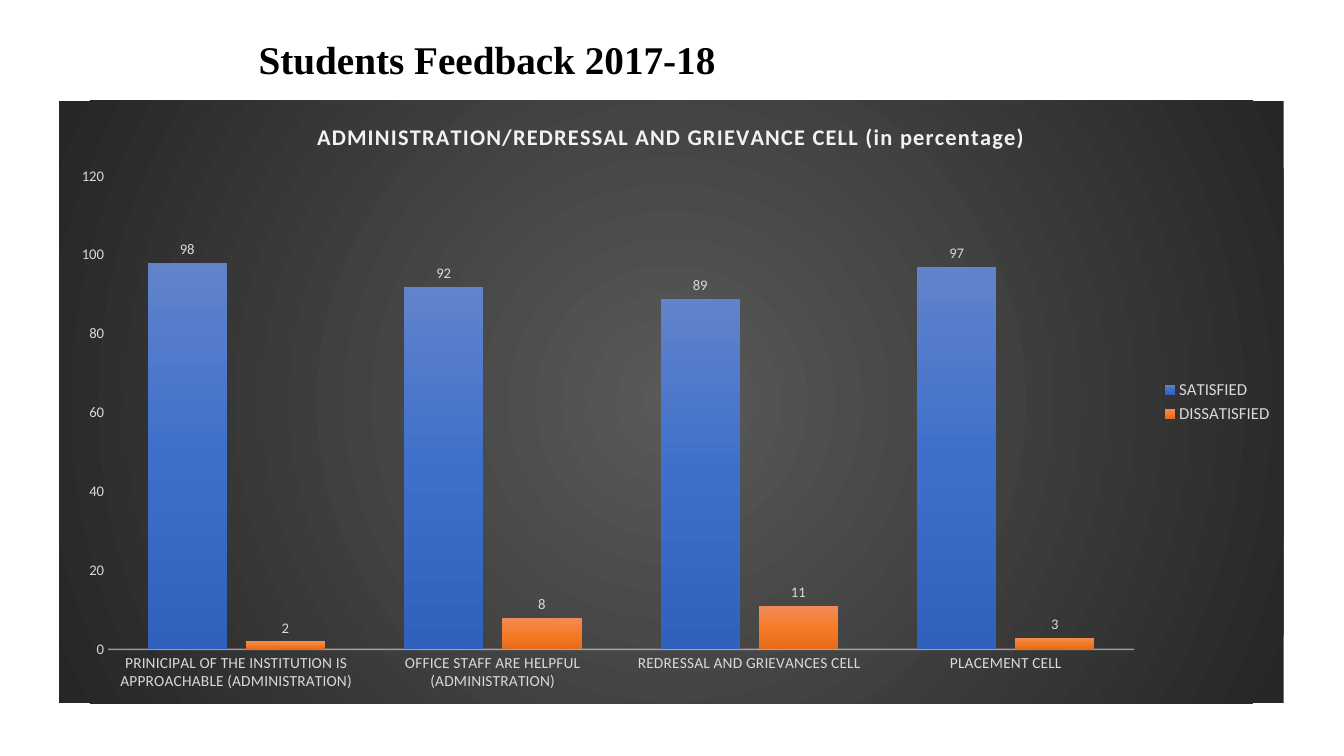
from lxml.etree import SubElement
from pptx import Presentation
from pptx.chart.data import CategoryChartData
from pptx.dml.color import RGBColor
from pptx.enum.chart import (XL_CHART_TYPE, XL_LABEL_POSITION, XL_LEGEND_POSITION,
                             XL_TICK_MARK)
from pptx.enum.text import MSO_AUTO_SIZE
from pptx.oxml import parse_xml
from pptx.oxml.ns import nsdecls, qn
from pptx.util import Inches, Pt

BLACK = RGBColor(0x00, 0x00, 0x00)
WHITE_SMOKE = RGBColor(0xF2, 0xF2, 0xF2)
LIGHT_GREY = RGBColor(0xD9, 0xD9, 0xD9)
BACKDROP = (RGBColor(0x59, 0x59, 0x59), RGBColor(0x26, 0x26, 0x26))
BLUES = (RGBColor(0x61, 0x83, 0xCB), RGBColor(0x3E, 0x70, 0xCA), RGBColor(0x30, 0x62, 0xBB))
ORANGES = (RGBColor(0xF1, 0x8C, 0x57), RGBColor(0xF6, 0x7B, 0x28), RGBColor(0xE5, 0x6C, 0x19))

QUESTIONS = (
    "PRINICIPAL OF THE INSTITUTION IS APPROACHABLE (ADMINISTRATION)",
    "OFFICE STAFF ARE HELPFUL (ADMINISTRATION)",
    "REDRESSAL AND GRIEVANCES CELL",
    "PLACEMENT CELL",
)
ANSWERS = (
    ("SATISFIED", (98, 92, 89, 97), BLUES),
    ("DISSATISFIED", (2, 8, 11, 3), ORANGES),
)
LINEAR = '<a:lin ang="5400000" scaled="0"/>'
RADIAL = '<a:path path="circle"><a:fillToRect l="50000" t="50000" r="50000" b="50000"/></a:path>'


def gradient(colours, direction):
    """Return a gradient fill with evenly spaced stops."""
    step = 100000 // (len(colours) - 1)
    stops = "".join(f'<a:gs pos="{i * step}"><a:srgbClr val="{colour}"/></a:gs>'
                    for i, colour in enumerate(colours))
    return parse_xml(f'<a:gradFill {nsdecls("a")} rotWithShape="1">'
                     f'<a:gsLst>{stops}</a:gsLst>{direction}</a:gradFill>')


class FeedbackSlide:
    """Holds the style and the current slide; boxes are shares of the slide's size."""

    def __init__(self, presentation, heading_font, chart_font):
        self.width, self.height = presentation.slide_width, presentation.slide_height
        self.slide = presentation.slides.add_slide(presentation.slide_layouts[6])
        self.heading_font, self.chart_font = heading_font, chart_font

    def place(self, left, top, width, height):
        return (round(left * self.width), round(top * self.height),
                round(width * self.width), round(height * self.height))

    def style(self, font, size, colour, name=None, bold=False):
        font.name, font.size, font.bold = name or self.chart_font, Pt(size), bold
        font.color.rgb = colour

    def heading(self, text, box):
        frame = self.slide.shapes.add_textbox(*self.place(*box)).text_frame
        frame.word_wrap = True
        frame.auto_size = MSO_AUTO_SIZE.SHAPE_TO_FIT_TEXT
        frame.text = text
        self.style(frame.paragraphs[0].runs[0].font, 28, BLACK, self.heading_font, True)

    def column_chart(self, title, categories, answers, box, plot_area):
        data = CategoryChartData()
        data.categories = categories
        for name, values, _ in answers:
            data.add_series(name, values)
        chart = self.slide.shapes.add_chart(
            XL_CHART_TYPE.COLUMN_CLUSTERED, *self.place(*box), data).chart
        self.style(chart.font, 10, BLACK)
        self.chart_title(chart, title)
        self.axes(chart)
        self.columns(chart.plots[0], answers)
        self.legend(chart)
        self.backdrop(chart)
        self.plot_layout(chart, plot_area)

    def chart_title(self, chart, title):
        frame = chart.chart_title.text_frame
        frame.text = title
        font = frame.paragraphs[0].runs[0].font
        self.style(font, 16, WHITE_SMOKE, bold=True)
        font._element.set("spc", "100")
        chart.chart_title.include_in_layout = False

    def axes(self, chart):
        questions, percentages = chart.category_axis, chart.value_axis
        for axis, size in ((questions, 11), (percentages, 10.5)):
            axis.major_tick_mark = axis.minor_tick_mark = XL_TICK_MARK.NONE
            axis.has_major_gridlines = False
            self.style(axis.tick_labels.font, size, LIGHT_GREY)
        percentages.minimum_scale, percentages.maximum_scale = 0, 120
        percentages.major_unit = 20
        percentages.format.line.fill.background()
        baseline = questions.format.line
        baseline.width = Pt(1)
        baseline.color.rgb = WHITE_SMOKE
        colour = next(questions._element.find(qn("c:spPr")).iter(qn("a:srgbClr")))
        SubElement(colour, qn("a:alpha"), val="54000")

    def columns(self, plot, answers):
        plot.gap_width, plot.overlap = 100, -24
        plot.vary_by_categories = False
        for series, (_, _, colours) in zip(plot.series, answers):
            series._element.get_or_add_spPr().append(gradient(colours, LINEAR))
            labels = series.data_labels
            labels.show_value = True
            labels.position = XL_LABEL_POSITION.OUTSIDE_END
            self.style(labels.font, 10.5, LIGHT_GREY)

    def legend(self, chart):
        chart.has_legend = True
        chart.legend.position = XL_LEGEND_POSITION.RIGHT
        chart.legend.include_in_layout = False
        self.style(chart.legend.font, 12, LIGHT_GREY)

    def backdrop(self, chart):
        properties = parse_xml(f'<c:spPr {nsdecls("c", "a")}><a:ln><a:noFill/></a:ln></c:spPr>')
        properties.insert(0, gradient(BACKDROP, RADIAL))
        chart._chartSpace.find(qn("c:chart")).addnext(properties)

    def plot_layout(self, chart, area):
        """Fix the inner plot area, given as shares of the chart's size."""
        plot_area = chart._chartSpace.find(qn("c:chart")).find(qn("c:plotArea"))
        for automatic in plot_area.findall(qn("c:layout")):
            plot_area.remove(automatic)
        layout = parse_xml(f'<c:layout {nsdecls("c")}><c:manualLayout/></c:layout>')
        settings = [("layoutTarget", "inner"), ("xMode", "edge"), ("yMode", "edge")]
        for tag, value in settings + list(zip("xywh", area)):
            SubElement(layout[0], qn(f"c:{tag}"), val=str(value))
        plot_area.insert(0, layout)


def main():
    presentation = Presentation()
    presentation.slide_width, presentation.slide_height = Inches(13.33), Inches(7.5)
    feedback = FeedbackSlide(presentation, "Times New Roman", "Calibri")
    feedback.column_chart(
        "ADMINISTRATION/REDRESSAL AND GRIEVANCE CELL (in percentage)",
        QUESTIONS, ANSWERS,
        box=(0.044, 0.133, 0.911, 0.797), plot_area=(0.04, 0.126, 0.838, 0.785))
    feedback.heading("Students Feedback 2017-18", box=(0.185, 0.04, 0.422, 0.076))
    presentation.save("out.pptx")


if __name__ == "__main__":
    main()
